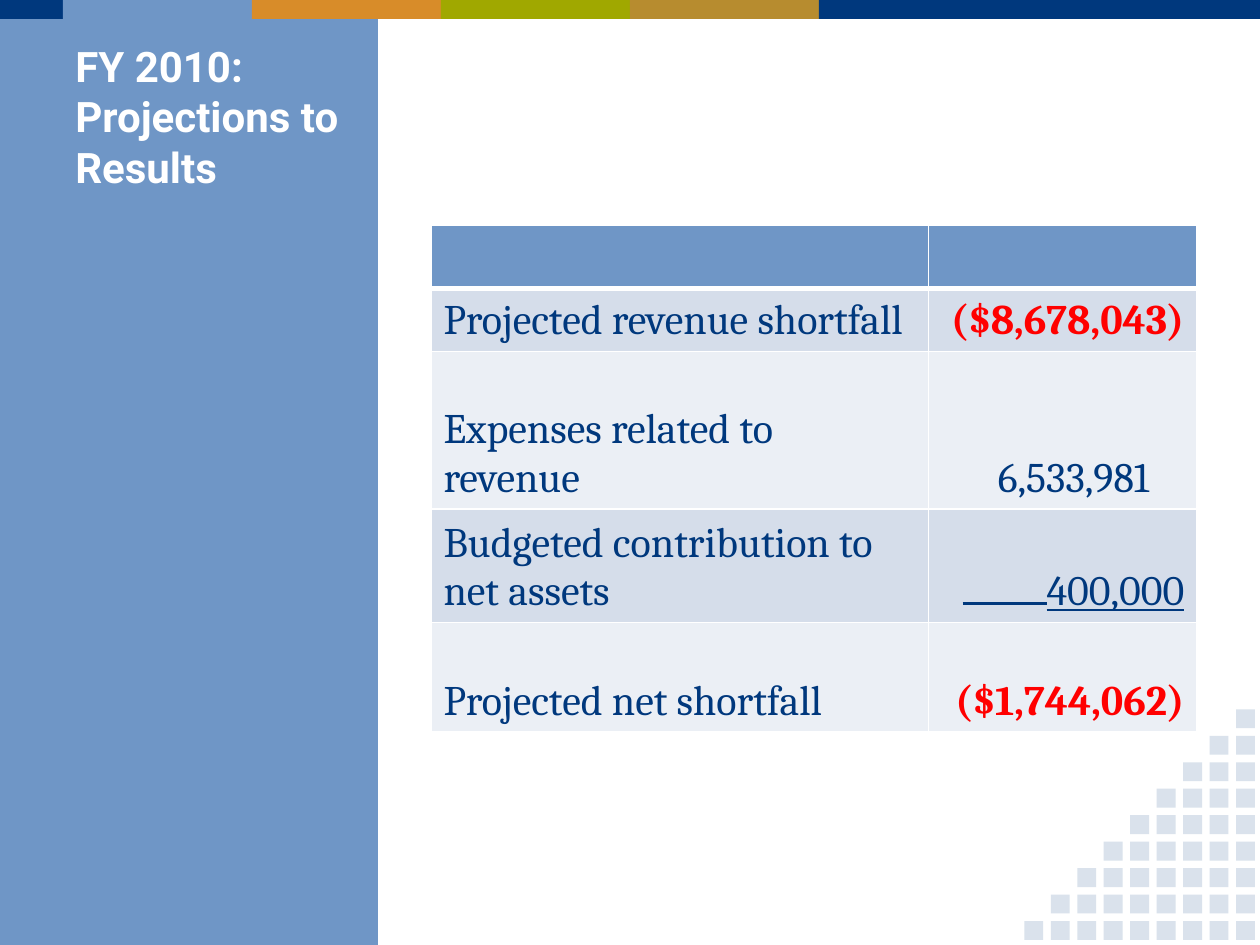
from dataclasses import dataclass

from lxml import etree
from pptx import Presentation
from pptx import util as u
from pptx.dml.color import RGBColor
from pptx.enum import shapes, text
from pptx.oxml.ns import qn


@dataclass(frozen=True)
class Theme:
    blue: str = "6F96C6"
    navy: str = "00387D"
    orange: str = "D88C29"
    green: str = "A0A800"
    gold: str = "B78C2F"
    pale: str = "DAE2EC"
    band_dark: str = "D5DDEA"
    band_light: str = "EBEFF5"
    white: str = "FFFFFF"
    red: str = "FF0000"
    heading_font: str = "Roboto"
    body_font: str = "Cambria"
    size: int = 24


class SlideBuilder:
    def __init__(self, slide, theme):
        self.slide = slide
        self.theme = theme

    def block(self, left, top, width, height, color):
        rect = self.slide.shapes.add_shape(
            shapes.MSO_SHAPE.RECTANGLE,
            *map(u.Inches, (left, top, width, height)))
        rect.shadow.inherit = False
        rect.fill.solid()
        rect.fill.fore_color.rgb = RGBColor.from_string(color)
        rect.line.fill.background()

    def run(self, paragraph, words, font, color, bold=False, underline=False):
        run = paragraph.add_run()
        run.text = words
        run.font.name = font
        run.font.size = u.Pt(self.theme.size)
        run.font.bold = bold
        run.font.underline = underline
        run.font.color.rgb = RGBColor.from_string(color)

    def title(self, words, left, top, width, height):
        box = self.slide.shapes.add_textbox(
            *map(u.Inches, (left, top, width, height)))
        frame = box.text_frame
        frame.word_wrap = True
        frame.vertical_anchor = text.MSO_ANCHOR.BOTTOM
        self.run(frame.paragraphs[0], words, self.theme.heading_font,
                 self.theme.white, bold=True)

    def rule(self, left, right, y):
        line = self.slide.shapes.add_connector(
            shapes.MSO_CONNECTOR.STRAIGHT,
            *map(u.Inches, (left, y, right, y)))
        line.line.color.rgb = RGBColor.from_string(self.theme.navy)
        line.line.width = u.Pt(1.5)
        etree.SubElement(line._element.spPr, qn("a:effectLst"))

    def table(self, left, top, widths, heights):
        frame = self.slide.shapes.add_table(
            len(heights), len(widths), u.Inches(left), u.Inches(top),
            u.Inches(sum(widths)), u.Inches(sum(heights)))
        table = frame.table
        table.horz_banding = False
        for column, width in zip(table.columns, widths):
            column.width = u.Inches(width)
        for row, height in zip(table.rows, heights):
            row.height = u.Inches(height)
        return table

    def cell(self, cell, fill, top_width=1, bottom_width=1):
        properties = cell._tc.get_or_add_tcPr()
        borders = {"L": 1, "R": 1, "T": top_width, "B": bottom_width}
        for side, width in borders.items():
            border = etree.SubElement(properties, qn(f"a:ln{side}"),
                                      w=str(u.Pt(width)))
            paint = etree.SubElement(border, qn("a:solidFill"))
            etree.SubElement(paint, qn("a:srgbClr"), val=self.theme.white)
        cell.fill.solid()
        cell.fill.fore_color.rgb = RGBColor.from_string(fill)
        cell.vertical_anchor = text.MSO_ANCHOR.BOTTOM


def main():
    theme = Theme()
    deck = Presentation()
    deck.slide_width, deck.slide_height = u.Inches(10), u.Inches(7.5)
    build = SlideBuilder(deck.slides.add_slide(deck.slide_layouts[6]), theme)

    strip = 0.15
    build.block(0, strip, 3, 7.5 - strip, theme.blue)

    square, pitch, steps = 0.15, 0.21, 9
    for level in range(steps):
        for step in range(steps - level):
            build.block(9.81 - step * pitch, 7.31 - level * pitch,
                        square, square, theme.pale)

    left = 0
    for width, color in ((0.5, theme.navy), (1.5, theme.blue),
                         (1.5, theme.orange), (1.5, theme.green),
                         (1.5, theme.gold), (3.5, theme.navy)):
        build.block(left, 0, width, strip, color)
        left += width

    build.title("FY 2010: Projections to Results", 0.5, 0.3, 2.33, 1.27)

    entries = (
        ("Projected revenue shortfall", "($8,678,043)"),
        ("Expenses related to revenue", "6,533,981"),
        ("Budgeted contribution to net assets", "400,000"),
        ("Projected net shortfall", "($1,744,062)"),
    )
    results = build.table(3.42, 1.79, (3.95, 2.13),
                          (0.5, 0.48, 1.25, 0.87, 0.87))
    for heading in results.rows[0].cells:
        build.cell(heading, theme.blue, bottom_width=3)
    for index, (item, amount) in enumerate(entries, start=1):
        fill = theme.band_dark if index % 2 else theme.band_light
        item_cell, amount_cell = results.rows[index].cells
        for cell in (item_cell, amount_cell):
            build.cell(cell, fill, top_width=3 if index == 1 else 1)
        build.run(item_cell.text_frame.paragraphs[0], item,
                  theme.body_font, theme.navy)
        figure = amount_cell.text_frame.paragraphs[0]
        figure.alignment = text.PP_ALIGN.RIGHT
        shortfall = amount.startswith("(")
        build.run(figure, amount, theme.body_font,
                  theme.red if shortfall else theme.navy,
                  bold=shortfall, underline=amount == "400,000")
    results.cell(2, 1).margin_right = u.Inches(0.38)
    build.rule(7.64, 8.31, 4.79)

    deck.save("out.pptx")


if __name__ == "__main__":
    main()
